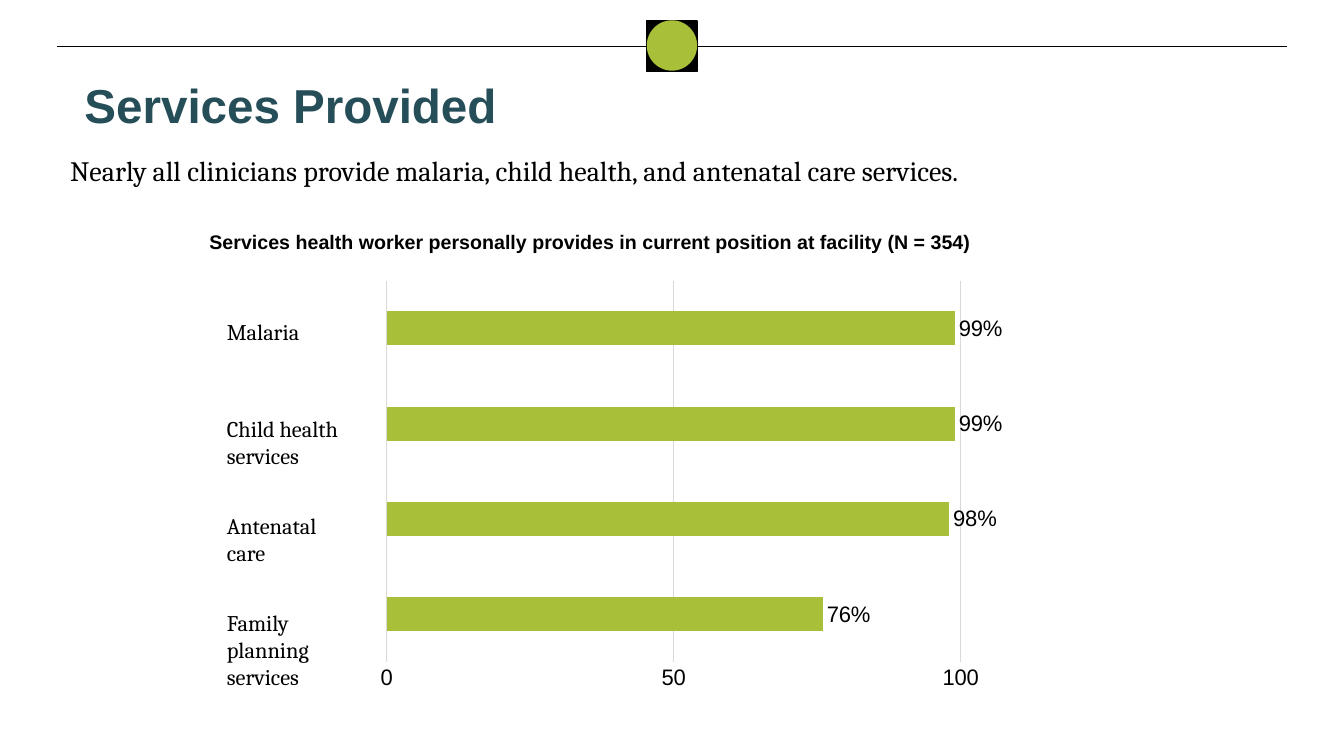
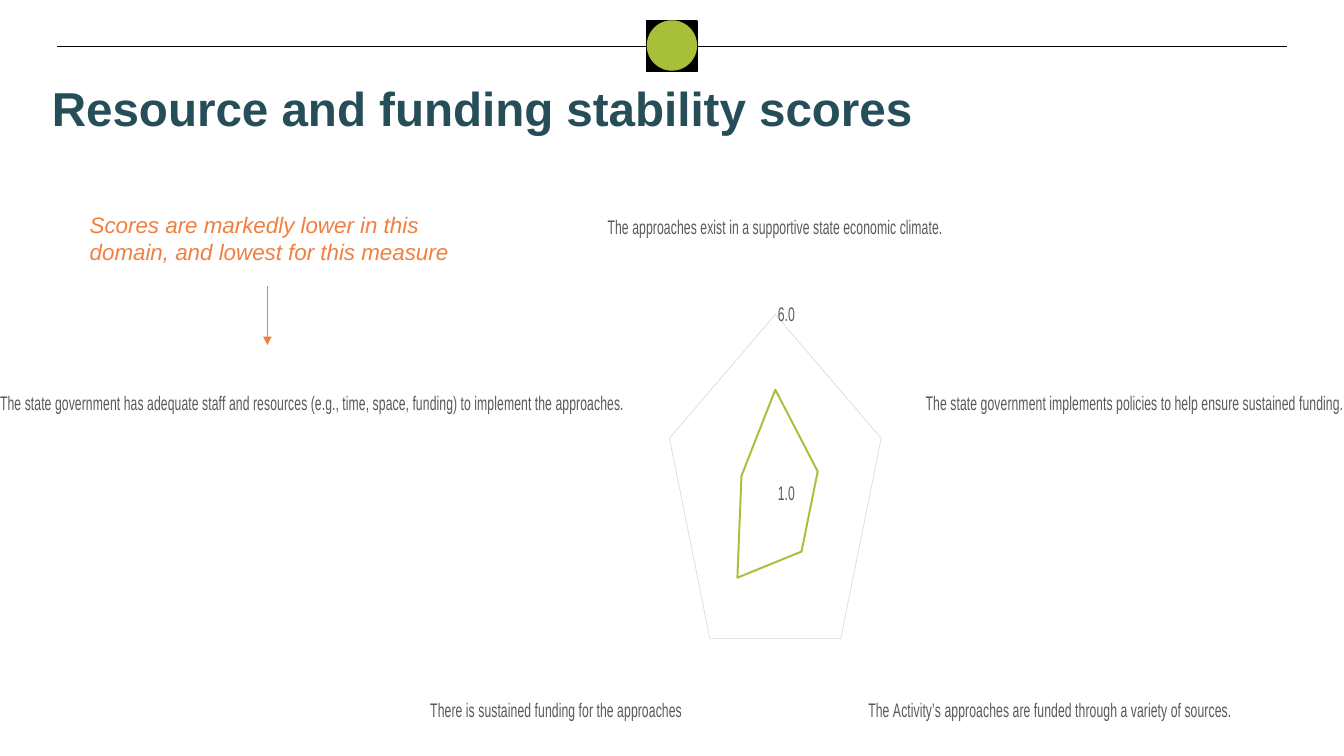
from lxml import etree
from pptx import Presentation
from pptx.chart.data import CategoryChartData
from pptx.dml.color import RGBColor
from pptx.enum.chart import XL_CHART_TYPE, XL_LABEL_POSITION, XL_TICK_LABEL_POSITION, XL_TICK_MARK
from pptx.enum.shapes import MSO_CONNECTOR, MSO_SHAPE
from pptx.enum.text import MSO_ANCHOR, PP_ALIGN
from pptx.oxml.ns import qn
from pptx.util import Pt

BAR, RADAR = XL_CHART_TYPE.BAR_CLUSTERED, XL_CHART_TYPE.RADAR
OUTSIDE_END = XL_LABEL_POSITION.OUTSIDE_END
NO_TICK, NO_LABELS = XL_TICK_MARK.NONE, XL_TICK_LABEL_POSITION.NONE
STRAIGHT = MSO_CONNECTOR.STRAIGHT
RECT, OVAL = MSO_SHAPE.RECTANGLE, MSO_SHAPE.OVAL
TOP, LEFT = MSO_ANCHOR.TOP, PP_ALIGN.LEFT

SANS, SERIF = "Arial", "Cambria"
COLORS = {
    "black": "000000",
    "white": "FFFFFF",
    "green": "A7BF39",
    "teal": "264E59",
    "orange": "F27F3E",
    "gray": "595959",
    "grid": "D9D9D9",
}


def rgb(name):
    return RGBColor.from_string(COLORS[name])


class Deck:
    """Holds the shared style and the slide being built."""

    def __init__(self):
        self.prs = Presentation()
        self.prs.slide_width, self.prs.slide_height = Pt(960), Pt(540)
        self.slide = None

    def new_slide(self, title, left, top):
        self.slide = self.prs.slides.add_slide(self.prs.slide_layouts[6])
        # Header rule with its centred badge
        self.line((41, 33), (919.5, 33), "black", 0.75)
        self.shape(RECT, (462, 15, 36, 36), "black", outline="black")
        self.shape(OVAL, (462, 14.5, 36, 36), "green")
        self.text(title, (left, top, 880, 50), 34, color="teal", bold=True)

    def style_font(self, font, size, name, color, bold=False, italic=False):
        font.size, font.name, font.bold, font.italic = Pt(size), name, bold, italic
        font.color.rgb = rgb(color)

    def fill_text(self, frame, words, size, font, color, bold=False, italic=False):
        frame.text = words
        frame.word_wrap = True
        frame.vertical_anchor = TOP
        for paragraph in frame.paragraphs:
            paragraph.alignment = LEFT
            for run in paragraph.runs:
                self.style_font(run.font, size, font, color, bold, italic)

    def text(self, words, box, size, font=SANS, color="black", bold=False, italic=False):
        area = self.slide.shapes.add_textbox(*map(Pt, box))
        self.fill_text(area.text_frame, words, size, font, color, bold, italic)

    def shape(self, kind, box, fill, outline=None):
        shape = self.slide.shapes.add_shape(kind, *map(Pt, box))
        shape.shadow.inherit = False
        shape.fill.solid()
        shape.fill.fore_color.rgb = rgb(fill)
        if outline:
            shape.line.color.rgb = rgb(outline)
            shape.line.width = Pt(1)
        else:
            shape.line.fill.background()
        return shape

    def label(self, words, box):
        self.fill_text(self.shape(RECT, box, "white").text_frame, words, 16, SERIF, "black")

    def line(self, start, end, color, width, arrow=False):
        line = self.slide.shapes.add_connector(STRAIGHT, *map(Pt, start + end))
        line.line.color.rgb = rgb(color)
        line.line.width = Pt(width)
        properties = line._element.spPr
        if arrow:
            etree.SubElement(properties.find(qn("a:ln")), qn("a:tailEnd"), type="triangle")
        etree.SubElement(properties, qn("a:effectLst"))

    def chart(self, kind, box, categories, values, limits, size, color):
        data = CategoryChartData()
        data.categories = categories
        data.add_series("Series 1", values)
        chart = self.slide.shapes.add_chart(kind, *map(Pt, box), data).chart
        chart.has_legend = chart.has_title = False
        self.style_font(chart.font, size, SANS, color)
        chart.plots[0].vary_by_categories = False
        # Value axis with light gridlines
        axis = chart.value_axis
        axis.minimum_scale, axis.maximum_scale, axis.major_unit = limits
        axis.major_tick_mark = axis.minor_tick_mark = NO_TICK
        axis.format.line.fill.background()
        axis.has_major_gridlines = True
        grid = axis.major_gridlines.format.line
        grid.color.rgb, grid.width = rgb("grid"), Pt(0.75)
        chart.category_axis.major_tick_mark = NO_TICK
        return chart

    def bar_chart(self, box, categories, values, limits):
        chart = self.chart(BAR, box, categories, values, limits, 16, "black")
        chart.category_axis.tick_label_position = NO_LABELS
        chart.category_axis.format.line.fill.background()
        plot = chart.plots[0]
        plot.gap_width = 182
        fill = plot.series[0].format.fill
        fill.solid()
        fill.fore_color.rgb = rgb("green")
        plot.has_data_labels = True
        labels = plot.data_labels
        labels.show_value, labels.position = True, OUTSIDE_END
        labels.number_format, labels.number_format_is_linked = '0"%"', False
        self.style_font(labels.font, 16, SANS, "black")

    def radar_chart(self, box, categories, values, limits):
        chart = self.chart(RADAR, box, categories, values, limits, 14, "gray")
        ticks = chart.value_axis.tick_labels
        ticks.number_format, ticks.number_format_is_linked = "0.0", False
        spokes = chart.category_axis.format.line
        spokes.color.rgb, spokes.width = rgb("grid"), Pt(0.75)
        outline = chart.plots[0].series[0].format.line
        outline.color.rgb, outline.width = rgb("green"), Pt(2.25)


def services_slide(deck):
    deck.new_slide("Services Provided", 53.3, 50.4)
    deck.text("Nearly all clinicians provide malaria, child health, and antenatal care services.",
              (43, 106, 873, 32), 20, SERIF)
    deck.text("Services health worker personally provides in current position at facility (N = 354)",
              (142.5, 160.5, 567, 24), 14, bold=True)
    deck.bar_chart((263, 194.5, 453, 304.5), ["1", "2", "3", "4"], [76, 98, 99, 99], (0, 102, 50))
    # Service names beside the bars
    services = [("Malaria", 27), ("Child health services", 65),
                ("Antenatal care", 46), ("Family planning services", 65)]
    for row, (service, height) in enumerate(services):
        deck.label(service, (155, 224 + 69.2 * row, 98.5, height))


def funding_slide(deck):
    deck.new_slide("Resource and funding stability scores", 30, 52.5)
    deck.text("Scores are markedly lower in this domain, and lowest for this measure",
              (57, 147, 304, 46), 16, color="orange", italic=True)
    scores = {
        "The approaches exist in a supportive state economic climate.": 3.9,
        "The state government implements policies to help ensure sustained funding.": 3,
        "The Activity’s approaches are funded through a variety of sources.": 3,
        "There is sustained funding for the approaches": 3.9,
        "The state government has adequate staff and resources (e.g., time, space, funding) "
        "to implement the approaches.": 2.6,
    }
    deck.radar_chart((0, 115, 960, 440.5), list(scores), list(scores.values()), (1, 7, 5))
    # Arrow from the remark to the lowest measure
    deck.line((191, 204.5), (191, 246.5), "orange", 1, arrow=True)


def main():
    deck = Deck()
    services_slide(deck)
    funding_slide(deck)
    deck.prs.save("out.pptx")


if __name__ == "__main__":
    main()
